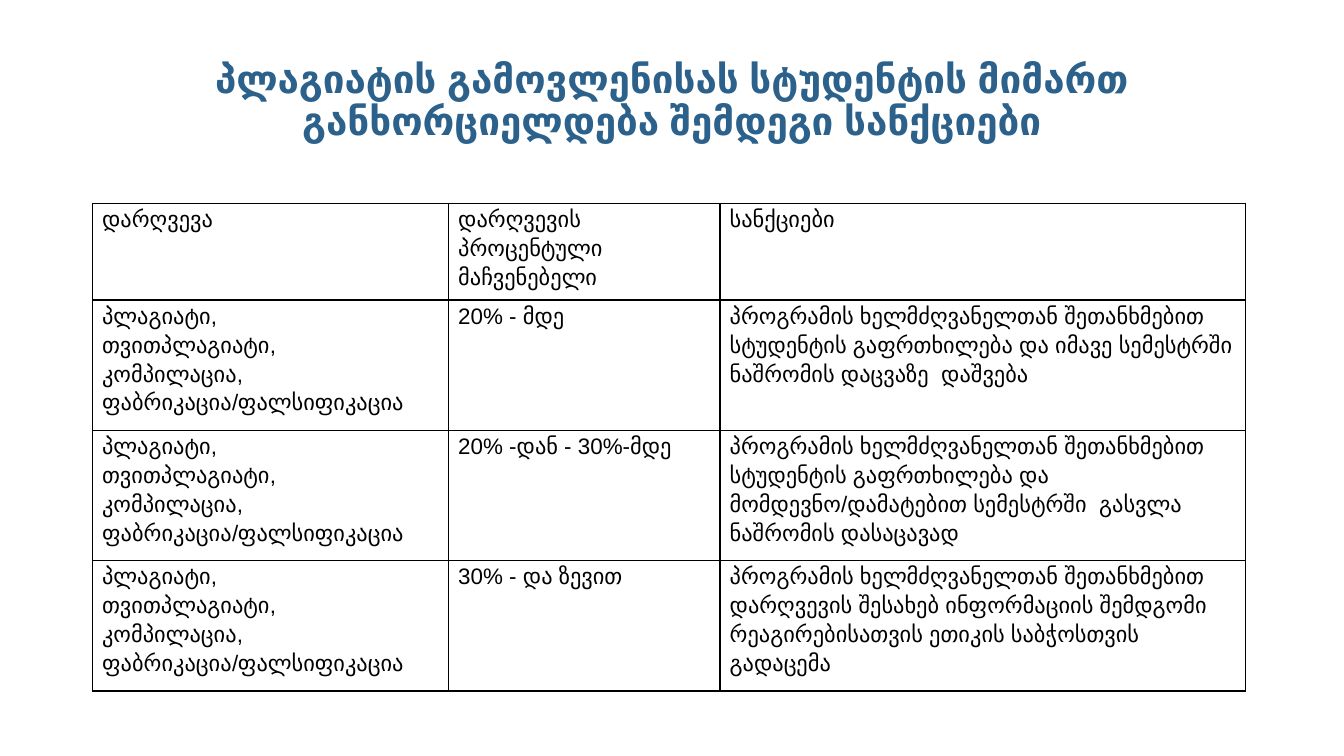
import dataclasses

import lxml.etree
import pptx
import pptx.dml.color
import pptx.enum.text
import pptx.oxml.ns
import pptx.util
from pptx.util import Cm, Pt


@dataclasses.dataclass(frozen=True)
class Theme:
    """Colours, font and type sizes of the slide."""

    heading: str = "2B618B"
    ink: str = "000000"
    font: str = "Arial"
    heading_size: float = 20.7
    body_size: float = 12


THEME = Theme()
HEADING = "პლაგიატის გამოვლენისას სტუდენტის მიმართ განხორციელდება შემდეგი სანქციები"
VIOLATIONS = "პლაგიატი,\nთვითპლაგიატი,\nკომპილაცია,\nფაბრიკაცია/ფალსიფიკაცია"
COLUMN_HEADS = ("დარღვევა", "დარღვევის პროცენტული მაჩვენებელი", "სანქციები")
SANCTIONS = {
    "20% - მდე": "პროგრამის ხელმძღვანელთან შეთანხმებით სტუდენტის გაფრთხილება და იმავე სემესტრში ნაშრომის დაცვაზე  დაშვება",
    "20% -დან - 30%-მდე": "პროგრამის ხელმძღვანელთან შეთანხმებით სტუდენტის გაფრთხილება და მომდევნო/დამატებით სემესტრში  გასვლა ნაშრომის დასაცავად",
    "30% - და ზევით": "პროგრამის ხელმძღვანელთან შეთანხმებით დარღვევის შესახებ ინფორმაციის შემდგომი რეაგირებისათვის ეთიკის საბჭოსთვის გადაცემა",
}
COLUMN_WIDTHS = (Cm(6.73), Cm(5.13), Cm(9.93))
ROW_HEIGHTS = (Cm(1.83),) + (Cm(2.46),) * len(SANCTIONS)


def apply_format(target, values):
    """Set every attribute named in values on target."""
    for name, value in values.items():
        setattr(target, name, value)


def format_text(frame, size, colour, bold, paragraph_format):
    """Give all paragraphs of a text frame one look."""
    for paragraph in frame.paragraphs:
        apply_format(paragraph, paragraph_format)
        for run in paragraph.runs:
            apply_format(run.font, {"name": THEME.font, "size": Pt(size), "bold": bold})
            run.font.color.rgb = pptx.dml.color.RGBColor.from_string(colour)


def add_heading(slide):
    """Place and format the title placeholder."""
    heading = slide.shapes.title
    apply_format(heading, {"left": Cm(1.27), "top": Cm(0.58), "width": Cm(22.86), "height": Cm(2.39)})
    frame = heading.text_frame
    frame.text = HEADING
    apply_format(frame, {
        "word_wrap": True,
        "auto_size": pptx.enum.text.MSO_AUTO_SIZE.NONE,
        "vertical_anchor": pptx.enum.text.MSO_ANCHOR.BOTTOM,
        "margin_left": Cm(0.25),
        "margin_right": Cm(0.25),
        "margin_top": Cm(0.25),
        "margin_bottom": Cm(0.25),
    })
    format_text(frame, THEME.heading_size, THEME.heading, True,
                {"alignment": pptx.enum.text.PP_ALIGN.CENTER, "line_spacing": 0.9})


def add_borders(cell):
    """Draw a thin line on all four sides of a cell."""
    properties = cell._tc.get_or_add_tcPr()
    qn = pptx.oxml.ns.qn
    for position, side in enumerate(("a:lnL", "a:lnR", "a:lnT", "a:lnB")):
        border = lxml.etree.Element(qn(side), w=str(Pt(1)))
        fill = lxml.etree.SubElement(border, qn("a:solidFill"))
        lxml.etree.SubElement(fill, qn("a:srgbClr"), val=THEME.ink)
        properties.insert(position, border)


def fill_cell(cell, text):
    """Write text into a bordered cell without background."""
    cell.text = text
    apply_format(cell, {"margin_left": Cm(0.18), "margin_right": Cm(0.18),
                        "margin_top": 0, "margin_bottom": 0})
    format_text(cell.text_frame, THEME.body_size, THEME.ink, False, {"line_spacing": 1.15})
    cell.fill.background()
    add_borders(cell)


def add_sanctions(slide):
    """Add the table of violations, percentages and sanctions."""
    rows = [COLUMN_HEADS] + [(VIOLATIONS, share, sanction) for share, sanction in SANCTIONS.items()]
    table = slide.shapes.add_table(
        len(rows), len(COLUMN_HEADS), Cm(1.75), Cm(3.84), sum(COLUMN_WIDTHS), sum(ROW_HEIGHTS)).table
    apply_format(table, {"first_row": False, "horz_banding": False})
    for column, width in zip(table.columns, COLUMN_WIDTHS):
        column.width = width
    for row, height, texts in zip(table.rows, ROW_HEIGHTS, rows):
        row.height = height
        for cell, text in zip(row.cells, texts):
            fill_cell(cell, text)


def main():
    """Build and save the slide."""
    deck = pptx.Presentation()
    apply_format(deck, {"slide_width": Cm(25.4), "slide_height": Cm(14.28)})
    slide = deck.slides.add_slide(deck.slide_layouts[5])
    add_heading(slide)
    add_sanctions(slide)
    deck.save("out.pptx")


if __name__ == "__main__":
    main()
